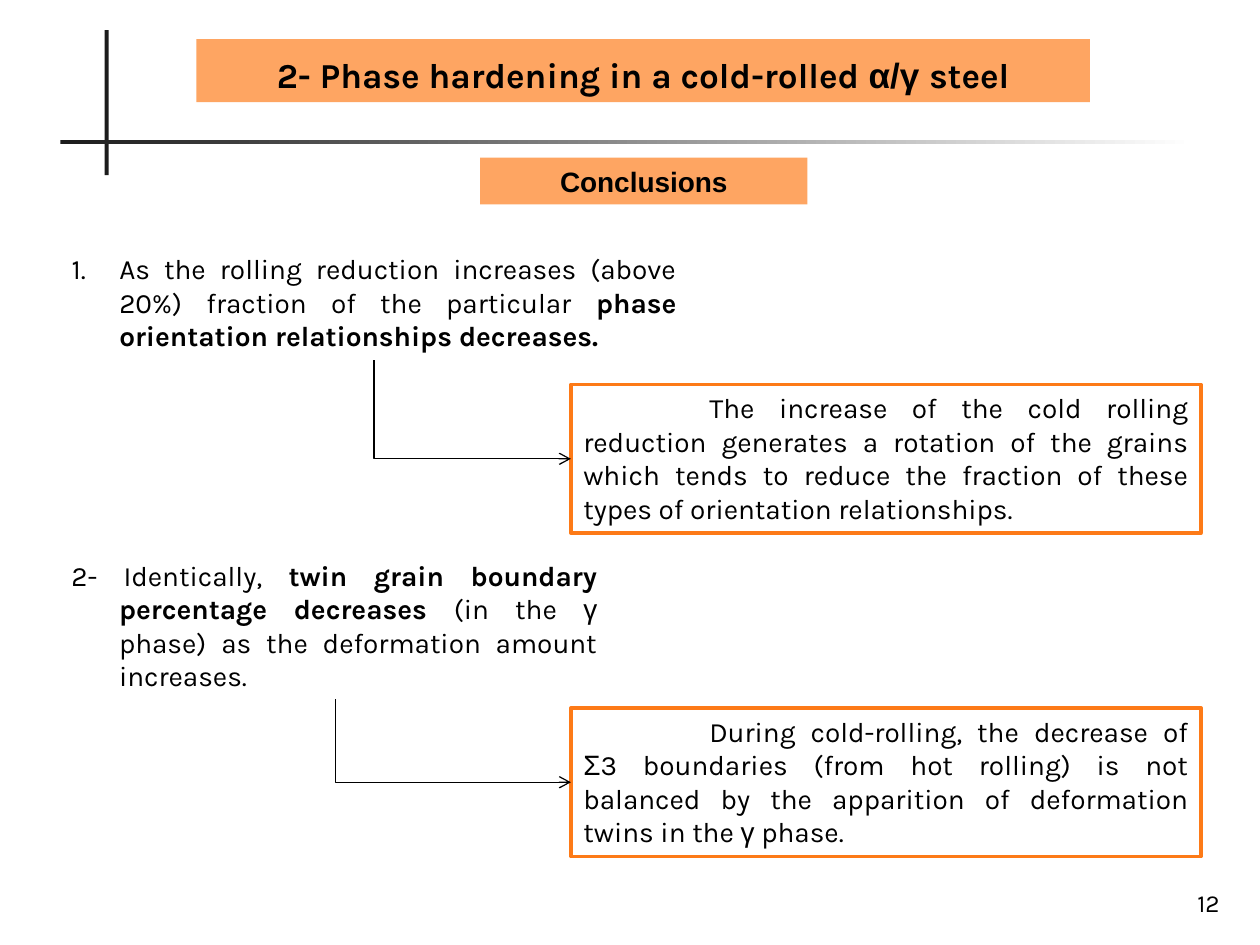
from dataclasses import dataclass
from typing import Optional

from lxml.etree import SubElement
from pptx import Presentation
from pptx.dml.color import RGBColor
from pptx.enum.shapes import MSO_CONNECTOR as Link, MSO_SHAPE as Form
from pptx.enum.text import MSO_ANCHOR as Anchor, MSO_AUTO_SIZE as Auto, PP_ALIGN as Align
from pptx.oxml.ns import qn
from pptx.util import Cm, Pt

BLACK = RGBColor(0x00, 0x00, 0x00)
WHITE = RGBColor(0xFF, 0xFF, 0xFF)
INK = RGBColor(0x1C, 0x1C, 0x1C)
PEACH = RGBColor(0xFE, 0xA5, 0x62)
ORANGE = RGBColor(0xFD, 0x7A, 0x17)
KARLA = "Karla"
ARIAL = "Arial"


@dataclass
class Run:
    text: str
    bold: bool = False
    font: str = KARLA


@dataclass
class Box:
    left: float
    top: float
    width: float
    height: float

    def cm(self) -> tuple:
        return Cm(self.left), Cm(self.top), Cm(self.width), Cm(self.height)


@dataclass
class Point:
    box: Box
    runs: list[Run]
    number: Optional[str] = None


@dataclass
class Note:
    box: Box
    runs: list[Run]
    start: tuple[float, float]


HEAD = [
    Run("2- Phase hardening in a cold-rolled ", True),
    Run("α/γ ", True, ARIAL),
    Run("steel", True),
]
FIRST = Point(Box(1.19, 4.95, 12.7, 2.31), [
    Run("As the rolling reduction increases (above 20%) fraction of the particular "),
    Run("phase orientation relationships decreases.", True),
], "arabicPeriod")
SECOND = Point(Box(1.19, 11.13, 11.1, 3), [
    Run("2- Identically, "),
    Run("twin grain boundary percentage decreases ", True),
    Run("(in the "),
    Run("γ", font=ARIAL),
    Run(" phase) as the deformation amount increases."),
])
NOTES = [
    Note(Box(11.51, 7.75, 12.7, 3), [
        Run("The increase of the cold rolling reduction generates a rotation of the "
            "grains which tends to reduce the fraction of these types of "
            "orientation relationships."),
    ], (7.54, 7.26)),
    Note(Box(11.51, 14.27, 12.7, 3), [
        Run("During cold-rolling, the decrease of "),
        Run("Σ", font=ARIAL),
        Run("3 boundaries (from hot rolling) is not balanced by the apparition of "
            "deformation twins in the "),
        Run("γ", font=ARIAL),
        Run(" phase."),
    ], (6.76, 14.1)),
]


def place(shape, box: Box) -> None:
    shape.left, shape.top, shape.width, shape.height = box.cm()


def write(shape, runs: list[Run], size: int, align: Align,
          anchor: Anchor = Anchor.TOP, margin: float = 0, indent: float = 0):
    frame = shape.text_frame
    frame.word_wrap = True
    frame.auto_size = Auto.NONE
    frame.vertical_anchor = anchor
    para = frame.paragraphs[0]
    para.alignment = align
    para.space_before = Pt(0)
    props = para._p.get_or_add_pPr()
    props.set("marL", str(Cm(margin)))
    props.set("indent", str(Cm(indent)))
    for item in runs:
        run = para.add_run()
        run.text = item.text
        run.font.size = Pt(size)
        run.font.name = item.font
        run.font.bold = item.bold
        run.font.color.rgb = BLACK
    return para


def block(slide, box: Box, fill: RGBColor, line: Optional[RGBColor] = None):
    shape = slide.shapes.add_shape(Form.RECTANGLE, *box.cm())
    shape.shadow.inherit = False
    shape.fill.solid()
    shape.fill.fore_color.rgb = fill
    if line is None:
        shape.line.fill.background()
    else:
        shape.line.color.rgb = line
        shape.line.width = Pt(2)
    return shape


def list_point(shape, point: Point) -> None:
    para = write(shape, point.runs, 16, Align.JUSTIFY, margin=0.96, indent=-0.96)
    if point.number:
        props = para._p.get_or_add_pPr()
        SubElement(props, qn("a:buFont"), typeface=KARLA)
        SubElement(props, qn("a:buAutoNum"), type=point.number)


def arrow(slide, start: tuple[float, float], end: tuple[float, float]) -> None:
    mid_x, mid_y = (start[0] + end[0]) / 2, (start[1] + end[1]) / 2
    half_x, half_y = (end[0] - start[0]) / 2, (end[1] - start[1]) / 2
    link = slide.shapes.add_connector(
        Link.ELBOW,
        Cm(mid_x + half_y), Cm(mid_y - half_x),
        Cm(mid_x - half_y), Cm(mid_y + half_x))
    link.line.color.rgb = BLACK
    link.line.width = Pt(0.75)
    props = link._element.spPr
    props.find(qn("a:xfrm")).set("rot", "16200000")
    props.find(qn("a:prstGeom")).set("prst", "bentConnector2")
    SubElement(props.find(qn("a:ln")), qn("a:tailEnd"), type="arrow")
    SubElement(props, qn("a:effectLst"))


def rules(slide) -> None:
    block(slide, Box(2.11, 0.61, 0.08, 2.92), INK)
    bar = block(slide, Box(1.22, 2.82, 22.86, 0.08), INK)
    bar.fill.gradient()
    bar.fill.gradient_angle = 0
    for stop, shade in zip(bar.fill.gradient_stops, (INK, WHITE)):
        stop.color.rgb = shade


def main() -> None:
    deck = Presentation()
    deck.slide_width, deck.slide_height = Cm(25.4), Cm(19.05)
    slide = deck.slides.add_slide(deck.slide_layouts[1])
    rules(slide)

    title = slide.shapes.title
    place(title, Box(3.96, 0.79, 18.01, 1.27))
    title.fill.solid()
    title.fill.fore_color.rgb = PEACH
    write(title, HEAD, 20, Align.CENTER).line_spacing = 1.2

    label = block(slide, Box(9.68, 3.18, 6.6, 0.94), PEACH)
    write(label, [Run("Conclusions", True, ARIAL)], 16, Align.CENTER, Anchor.MIDDLE)

    body = slide.placeholders[1]
    place(body, FIRST.box)
    list_point(body, FIRST)
    list_point(slide.shapes.add_textbox(*SECOND.box.cm()), SECOND)

    for note in NOTES:
        box = note.box
        shape = block(slide, box, WHITE, ORANGE)
        write(shape, note.runs, 16, Align.JUSTIFY, indent=2.54)
        arrow(slide, note.start, (box.left, box.top + box.height / 2))

    page = slide.shapes.add_textbox(*Box(19.56, 17.35, 5.28, 1.27).cm())
    write(page, [Run("12")], 14, Align.RIGHT, Anchor.BOTTOM)
    deck.save("out.pptx")


if __name__ == "__main__":
    main()
